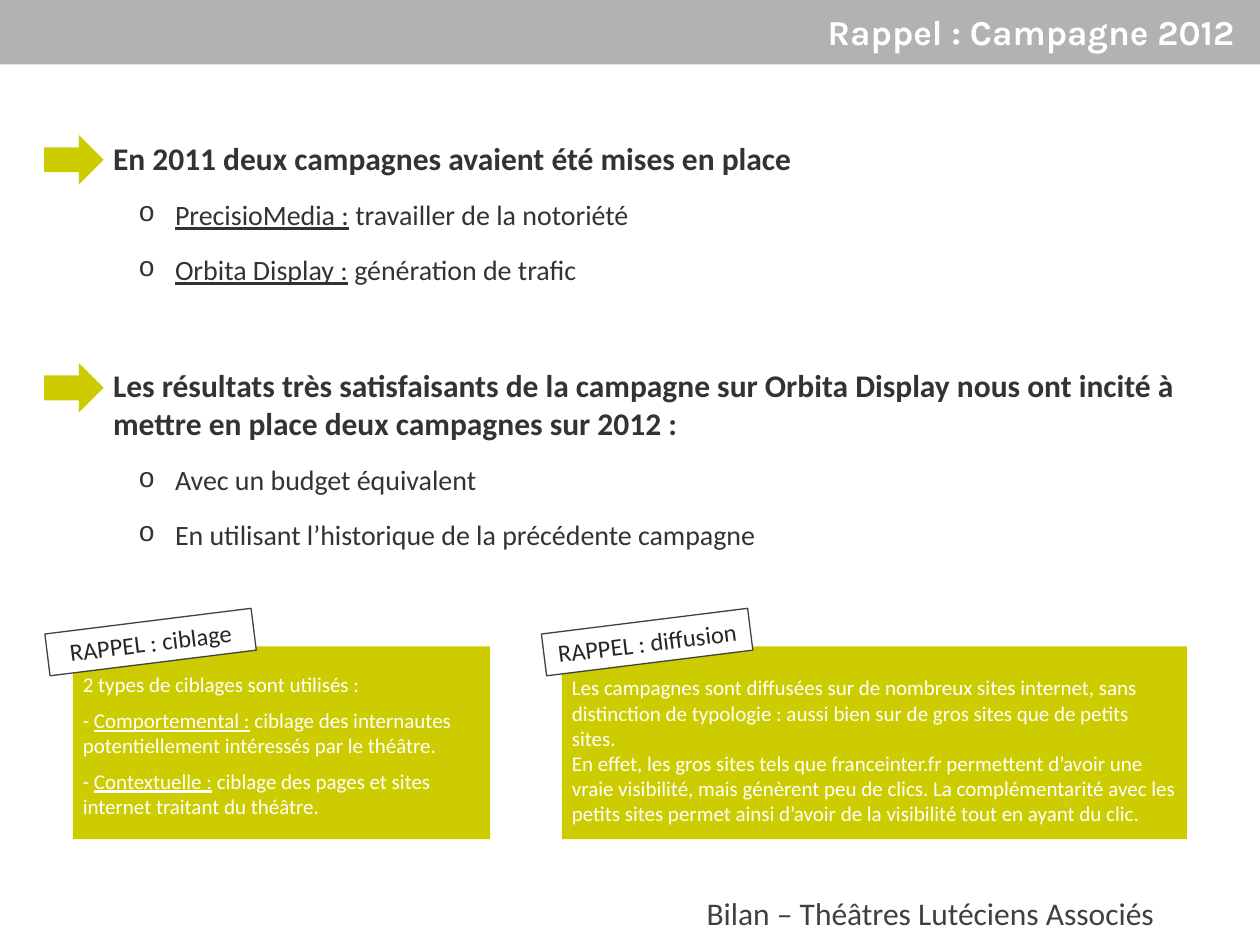
import pptx
import pptx.util
import pptx.dml.color
import pptx.enum.shapes
import pptx.enum.text
import pptx.oxml.xmlchemy
from dataclasses import dataclass
from lxml import etree

Cm, Pt = pptx.util.Cm, pptx.util.Pt
Kind = pptx.enum.shapes.MSO_SHAPE
Side = pptx.enum.text.PP_ALIGN
Hold = pptx.enum.text.MSO_ANCHOR
NS = "http://schemas.openxmlformats.org/drawingml/2006/main"
INSET = (0.25, 0.13, 0.25, 0.13)


@dataclass(frozen=True)
class Theme:
    band: str = "B2B2B2"
    lime: str = "CCCC00"
    white: str = "FFFFFF"
    ink: str = "333333"
    edge: str = "404040"
    label: str = "262626"
    font: str = "Calibri"
    head_font: str = "Karla"
    title: int = 20
    head: int = 18
    item: int = 16
    tag: int = 14
    note: int = 12


def color(code):
    return pptx.dml.color.RGBColor.from_string(code)


def write(frame, paras, size, ink, font, bold=False, align=Side.LEFT,
          anchor=Hold.MIDDLE, inset=INSET, after=0):
    """Fill a frame; each paragraph is a text or a dict that overrides the format.

    Within a text, the part between underscores is underlined.
    """
    frame.word_wrap = True
    frame.vertical_anchor = anchor
    (frame.margin_left, frame.margin_top,
     frame.margin_right, frame.margin_bottom) = map(Cm, inset)
    for i, para in enumerate(paras):
        look = para if isinstance(para, dict) else {"text": para}
        p = frame.paragraphs[0] if i == 0 else frame.add_paragraph()
        p.alignment = align
        p.space_after = Pt(after)
        if i and "before" in look:
            p.space_before = Pt(look["before"])
        if "left" in look:
            bullet(p, look["left"], look.get("hang", 0), look.get("mark"))
        for j, part in enumerate(look["text"].split("_")):
            if not part:
                continue
            run = p.add_run()
            run.text = part
            run.font.name = font
            run.font.size = Pt(look.get("size", size))
            run.font.bold = look.get("bold", bold)
            run.font.underline = j % 2 == 1
            run.font.color.rgb = color(ink)


def bullet(para, left, hang, mark):
    """Set the indent of a paragraph and its bullet sign, if any."""
    props = para._p.get_or_add_pPr()
    props.set("marL", str(Cm(left)))
    props.set("indent", str(-Cm(hang)))
    if mark:
        etree.SubElement(props, f"{{{NS}}}buFont", typeface="Courier New")
        etree.SubElement(props, f"{{{NS}}}buChar", char=mark)
    else:
        etree.SubElement(props, f"{{{NS}}}buNone")


class Deck:
    def __init__(self, theme):
        self.theme = theme
        self.file = pptx.Presentation()
        self.file.slide_width, self.file.slide_height = Cm(25.4), Cm(19.05)
        self.slide = None

    def start(self):
        self.slide = self.file.slides.add_slide(self.file.slide_layouts[5])

    def shape(self, kind, box, fill, line=None):
        item = self.slide.shapes.add_shape(kind, *map(Cm, box))
        item.shadow.inherit = False
        item.fill.solid()
        item.fill.fore_color.rgb = color(fill)
        if line:
            item.line.color.rgb = color(line)
            item.line.width = Pt(0.75)
        else:
            item.line.fill.background()
        return item

    def title(self, text):
        t = self.theme
        band = self.shape(Kind.RECTANGLE, (0, 0, 25.4, 1.3), t.band)
        head = self.slide.shapes.title
        head.element.addprevious(band.element)
        head.left, head.top, head.width, head.height = map(Cm, (0, 0, 25.4, 1.27))
        write(head.text_frame, [text], t.title, t.white, t.head_font, bold=True,
              align=Side.RIGHT, inset=(0.25, 0.13, 0.51, 0.13))

    def text(self, box, paras, **look):
        item = self.slide.shapes.add_textbox(*map(Cm, box))
        write(item.text_frame, paras, self.theme.head, font=self.theme.font, **look)

    def arrow(self, top):
        self.shape(Kind.RIGHT_ARROW, (0.89, top, 1.2, 1), self.theme.lime)

    def panel(self, left, width, paras, **look):
        item = self.shape(Kind.RECTANGLE, (left, 13.03, width, 3.89), self.theme.lime)
        write(item.text_frame, paras, self.theme.note, self.theme.white,
              self.theme.font, inset=(0.2, 0.51, 0.2, 0.2), **look)

    def tag(self, left, text):
        t = self.theme
        item = self.shape(Kind.RECTANGLE, (left, 12.52, 4.19, 0.85), t.white, t.edge)
        item.rotation = 352.9
        write(item.text_frame, [text], t.tag, t.label, t.font, align=Side.CENTER)


def main():
    theme = Theme()
    deck = Deck(theme)
    deck.start()
    deck.title("Rappel : Campagne 2012")

    # Main points: bold heads with bulleted items
    def head(text, before=6):
        return dict(text=text, bold=True, left=0.76, before=before)

    def item(text):
        return dict(text=text, size=theme.item, left=2.01, hang=0.74,
                    mark="o", before=6)

    deck.text((1.27, 2.18, 22.86, 9.55), [
        head("En 2011 deux campagnes avaient été mises en place"),
        item("_PrecisioMedia :_ travailler de la notoriété"),
        item("_Orbita Display :_ génération de trafic"),
        head("Les résultats très satisfaisants de la campagne sur Orbita Display "
             "nous ont incité à mettre en place deux campagnes sur 2012 :", before=40),
        item("Avec un budget équivalent"),
        item("En utilisant l’historique de la précédente campagne"),
    ], ink=theme.ink, after=6)

    # Footer line
    deck.text((8.69, 17.75, 14.83, 1.3), ["Bilan – Théâtres Lutéciens Associés"],
              ink=theme.edge, align=Side.RIGHT)

    # Arrows beside the heads
    for top in (2.72, 7.32):
        deck.arrow(top)

    # Reminder on targeting
    deck.panel(1.47, 8.41, [
        "2 types de ciblages sont utilisés :",
        "- _Comportemental :_ ciblage des internautes potentiellement "
        "intéressés par le théâtre.",
        "- _Contextuelle :_ ciblage des pages et sites internet traitant du théâtre.",
    ], anchor=Hold.TOP, after=6)
    deck.tag(0.94, "RAPPEL : ciblage")

    # Reminder on reach
    deck.panel(11.33, 12.6, [
        "Les campagnes sont diffusées sur de nombreux sites internet, sans distinction "
        "de typologie : aussi bien sur de gros sites que de petits sites.",
        "En effet, les gros sites tels que franceinter.fr permettent d’avoir une vraie "
        "visibilité, mais génèrent peu de clics. La complémentarité avec les petits "
        "sites permet ainsi d’avoir de la visibilité tout en ayant du clic.",
    ])
    deck.tag(10.95, "RAPPEL : diffusion")

    deck.file.save("out.pptx")


if __name__ == "__main__":
    main()
